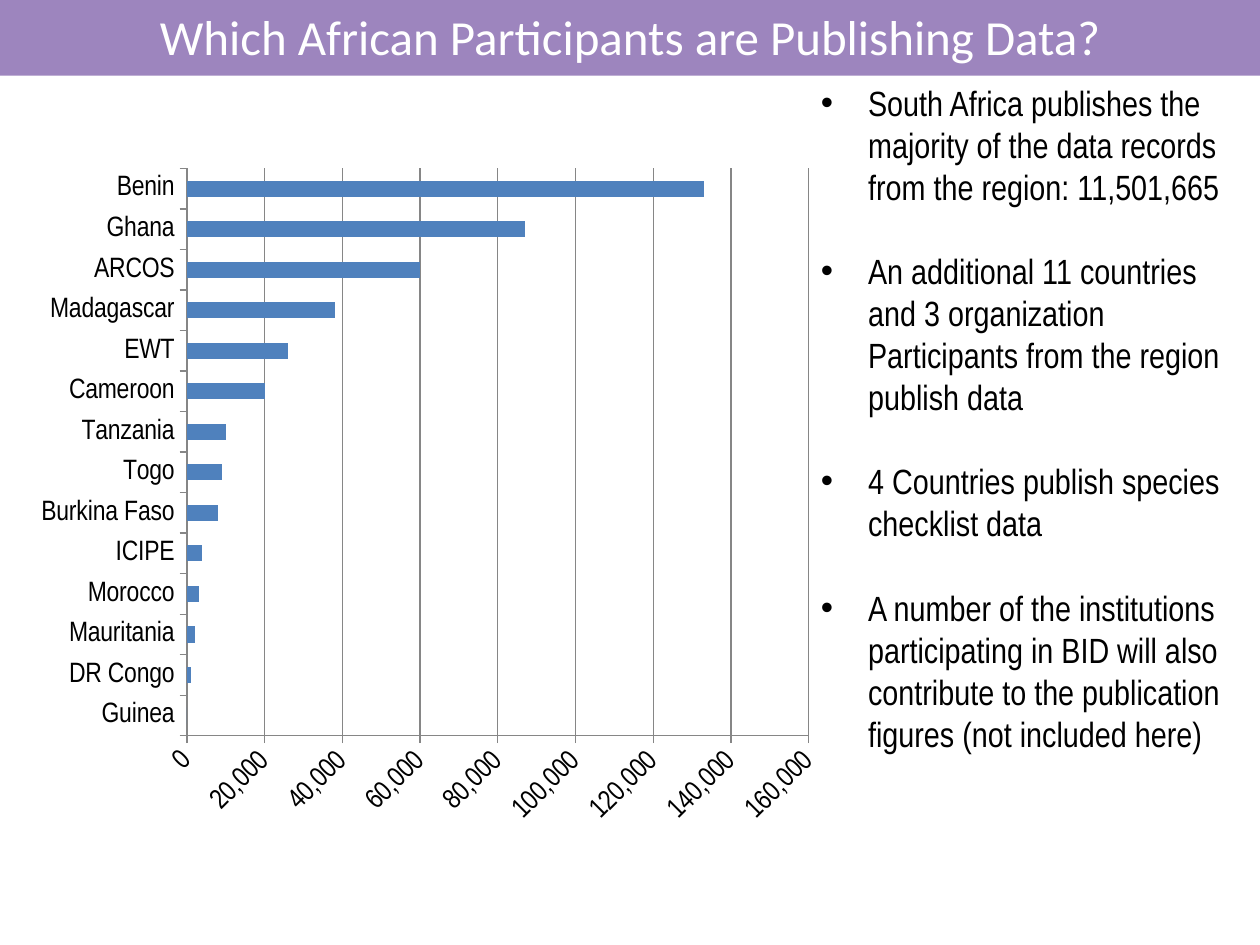
from pptx import Presentation
from pptx.chart.data import CategoryChartData as ChartData
from pptx.dml.color import RGBColor
from pptx.enum.chart import XL_CHART_TYPE as Kind, XL_TICK_MARK as Tick
from pptx.enum.shapes import MSO_SHAPE as Shape
from pptx.enum.text import MSO_ANCHOR as Anchor, PP_ALIGN as Align
from pptx.oxml import parse_xml
from pptx.oxml.ns import nsdecls
from pptx.util import Pt

BLACK = RGBColor(0x00, 0x00, 0x00)
WHITE = RGBColor(0xFF, 0xFF, 0xFF)
PURPLE = RGBColor(0x9D, 0x85, 0xBE)
BLUE = RGBColor(0x4F, 0x81, 0xBD)
GREY = RGBColor(0x86, 0x86, 0x86)

TITLE = "Which African Participants are Publishing Data?"
POINTS = [
    "South Africa publishes the majority of the data records from the region: 11,501,665",
    "An additional 11 countries and 3 organization Participants from the region publish data",
    "4 Countries publish species checklist data",
    "A number of the institutions participating in BID will also contribute to "
    "the publication figures (not included here)",
]
# Records per publisher, from the bottom bar up
RECORDS = {
    "Guinea": 0, "DR Congo": 1000, "Mauritania": 2000, "Morocco": 3000,
    "ICIPE": 4000, "Burkina Faso": 8000, "Togo": 9000, "Tanzania": 10000,
    "Cameroon": 20000, "EWT": 26000, "Madagascar": 38000, "ARCOS": 60000,
    "Ghana": 87000, "Benin": 133000,
}


def apply(item, values):
    for key, value in values.items():
        setattr(item, key, value)


class Deck:
    head = {"name": "Calibri", "size": Pt(28)}
    body = {"name": "Arial Narrow", "size": Pt(20)}
    label = {"name": "Arial Narrow", "size": Pt(16)}

    def __init__(self, slide):
        self.slide = slide

    def font(self, font, style, color):
        apply(font, style)
        font.color.rgb = color

    def banner(self, text, *box):
        bar = self.slide.shapes.add_shape(Shape.RECTANGLE, *map(Pt, box))
        bar.shadow.inherit = False
        bar.fill.solid()
        bar.fill.fore_color.rgb = PURPLE
        bar.line.fill.background()
        bar.text_frame.vertical_anchor = Anchor.MIDDLE
        para = bar.text_frame.paragraphs[0]
        para.alignment = Align.CENTER
        run = para.add_run()
        run.text = text
        self.font(run.font, self.head, WHITE)

    def bullets(self, lines, *box):
        frame = self.slide.shapes.add_textbox(*map(Pt, box)).text_frame
        frame.word_wrap = True
        for num, line in enumerate(lines):
            para = frame.add_paragraph() if num else frame.paragraphs[0]
            para.space_after = Pt(24)
            run = para.add_run()
            run.text = line
            self.font(run.font, self.body, BLACK)
            props = para._p.get_or_add_pPr()
            props.set("marL", str(Pt(27)))
            props.set("indent", str(-Pt(27)))
            for mark in ('buFont %s typeface="Arial"', 'buChar %s char="•"'):
                props.append(parse_xml(f"<a:{mark % nsdecls('a')}/>"))

    def bars(self, records, *box):
        data = ChartData(number_format="#,##0")
        data.categories = list(records)
        data.add_series("Series 1", list(records.values()))
        chart = self.slide.shapes.add_chart(
            Kind.BAR_CLUSTERED, *map(Pt, box), data).chart
        apply(chart, {"has_legend": False, "has_title": False})
        self.font(chart.font, {"name": "Calibri", "size": Pt(10)}, BLACK)
        plot = chart.plots[0]
        apply(plot, {"gap_width": 150, "vary_by_categories": False})
        fill = plot.series[0].format.fill
        fill.solid()
        fill.fore_color.rgb = BLUE

        # Axes
        cat, val = chart.category_axis, chart.value_axis
        for axis in (cat, val):
            apply(axis, {"major_tick_mark": Tick.OUTSIDE,
                         "minor_tick_mark": Tick.NONE})
            self.font(axis.tick_labels.font, self.label, BLACK)
            axis.format.line.color.rgb = GREY
        apply(val, {"minimum_scale": 0, "maximum_scale": 160000,
                    "major_unit": 20000, "has_major_gridlines": True})
        val.major_gridlines.format.line.color.rgb = GREY
        apply(val.tick_labels, {"number_format": "#,##0",
                                "number_format_is_linked": False})
        # Slanted value labels
        val._element.txPr.bodyPr.set("rot", str(-45 * 60000))


def main():
    show = Presentation()
    apply(show, {"slide_width": Pt(720), "slide_height": Pt(540)})
    deck = Deck(show.slides.add_slide(show.slide_layouts[6]))
    deck.bars(RECORDS, 14.4, 88.5, 462, 390)
    deck.bullets(POINTS, 462, 43.2, 252, 395)
    deck.banner(TITLE, 0, -2, 720, 45.2)
    show.save("out.pptx")


if __name__ == "__main__":
    main()
